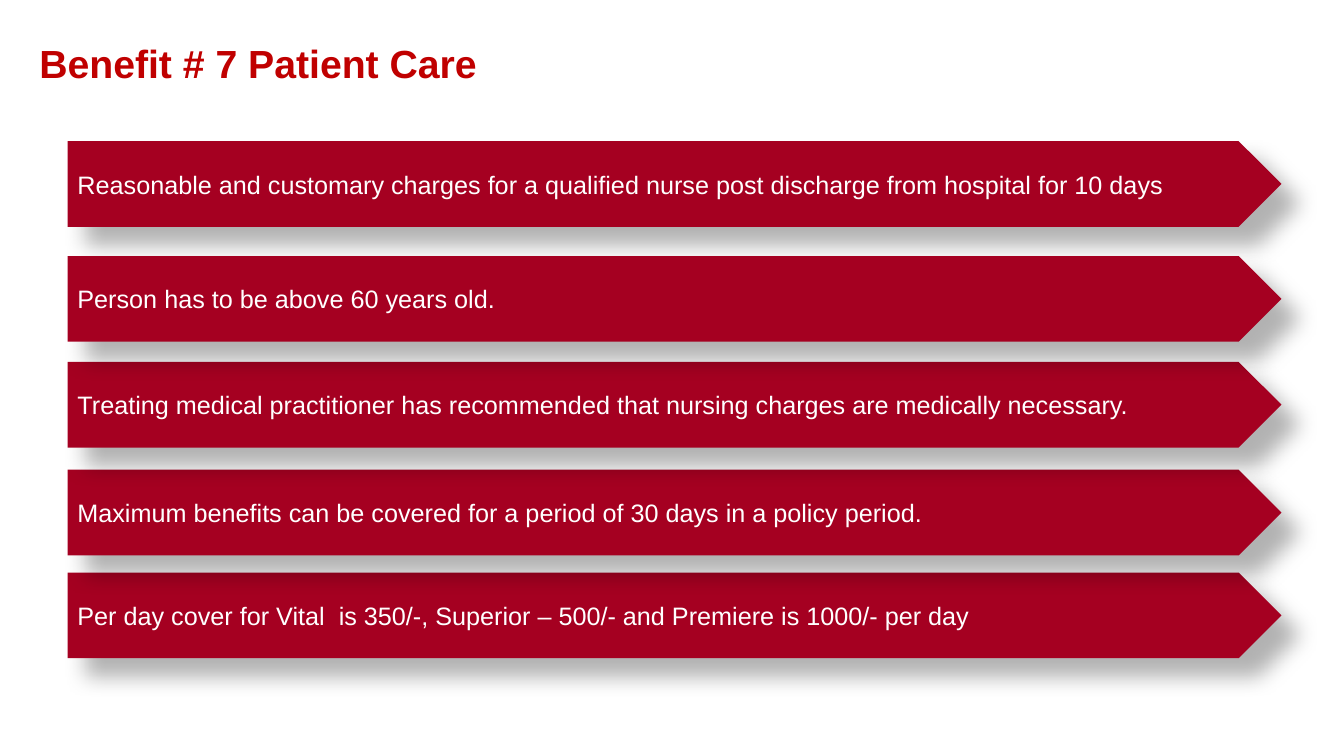
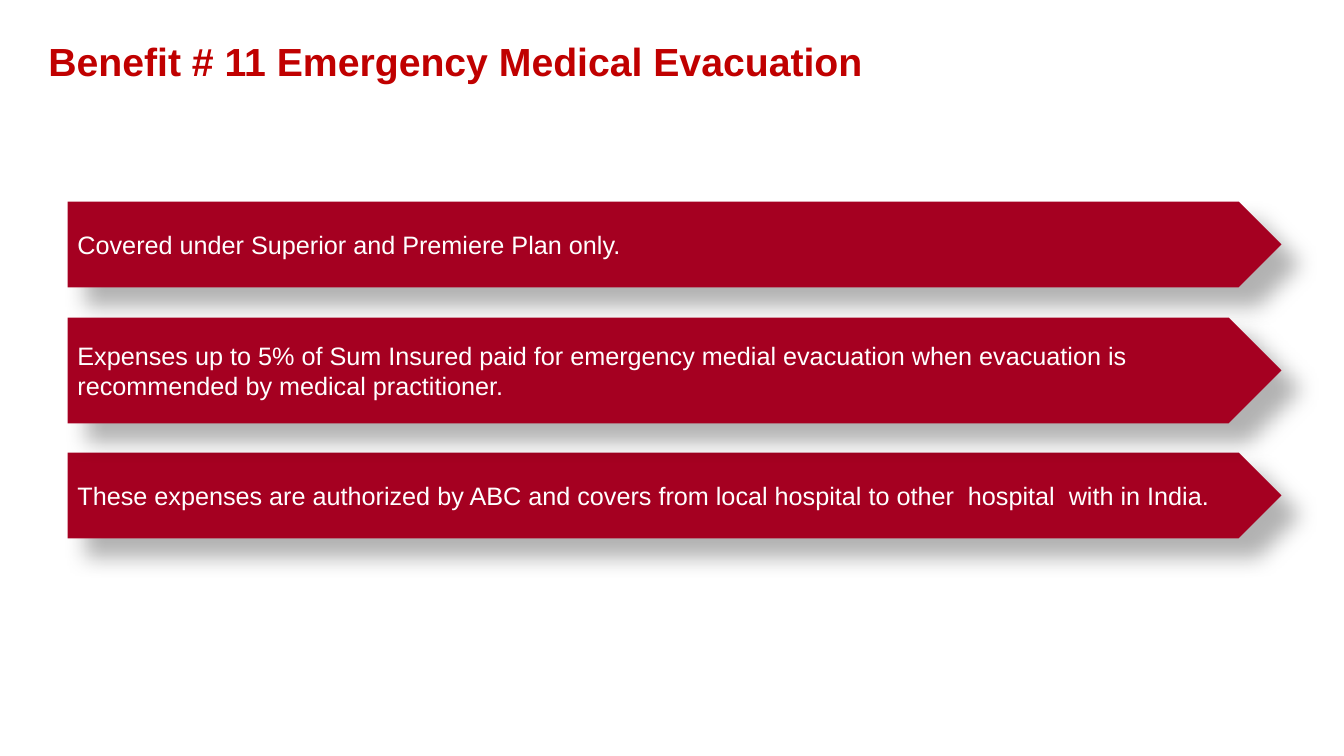
from lxml.etree import SubElement
from pptx import Presentation
from pptx.dml.color import RGBColor
from pptx.enum.shapes import MSO_SHAPE
from pptx.enum.text import MSO_ANCHOR, MSO_AUTO_SIZE, PP_ALIGN
from pptx.oxml.ns import qn
from pptx.util import Inches, Pt

RED = RGBColor(0xC0, 0x00, 0x00)
CRIMSON = RGBColor(0xA5, 0x00, 0x21)
WHITE = RGBColor(0xFF, 0xFF, 0xFF)
BLACK = RGBColor(0x00, 0x00, 0x00)
FONT = "Arial"
WIDE, HIGH = 13.33, 7.5
LEFT, SPAN = 0.67, 12.04
ROW = 0.85

SLIDES = [
    ("Benefit # 7 Patient Care", (0.29, 0), [
        (1.4, ROW, "Reasonable and customary charges for a qualified nurse post discharge from hospital for 10 days"),
        (2.54, ROW, "Person has to be above 60 years old."),
        (3.59, ROW, "Treating medical practitioner has recommended that nursing charges are medically necessary."),
        (4.66, ROW, "Maximum benefits can be covered for a period of 30 days in a policy period."),
        (5.68, ROW, "Per day cover for Vital  is 350/-, Superior – 500/- and Premiere is 1000/- per day"),
    ]),
    ("Benefit # 11 Emergency Medical Evacuation", (0.38, -0.02), [
        (2, ROW, "Covered under Superior and Premiere Plan only."),
        (3.15, 1.05, "Expenses up to 5% of Sum Insured paid for emergency medial evacuation "
                     "when evacuation is recommended by medical practitioner."),
        (4.49, ROW, "These expenses are authorized by ABC and covers from local hospital to other  hospital  with in India."),
    ]),
]


def write(shape, text, size, color, bold=False):
    """Fill a shape with one left-aligned, vertically centred paragraph."""
    frame = shape.text_frame
    frame.word_wrap = True
    frame.auto_size = MSO_AUTO_SIZE.NONE
    frame.vertical_anchor = MSO_ANCHOR.MIDDLE
    line = frame.paragraphs[0]
    line.text = text
    line.alignment = PP_ALIGN.LEFT
    font = line.font
    font.name, font.size, font.bold = FONT, Pt(size), bold
    font.color.rgb = color


def shade(shape):
    """Cast a soft shadow down and to the right."""
    shape.shadow.inherit = False
    effects = shape.element.spPr.find(qn("a:effectLst"))
    outer = SubElement(effects, qn("a:outerShdw"), blurRad=str(Pt(15)), dist=str(Pt(18)),
                       dir="2700000", algn="tl", rotWithShape="0")
    tint = SubElement(outer, qn("a:srgbClr"), val=str(BLACK))
    SubElement(tint, qn("a:alpha"), val="30000")


def add_title(slide, text, spot):
    """Place the slide title with its top left corner at the spot."""
    title = slide.shapes.title
    title.left, title.top = map(Inches, spot)
    title.width, title.height = Inches(12), Inches(1.25)
    write(title, text, 28, RED, True)


def add_arrow(slide, top, tall, text):
    """Draw one shadowed pentagon arrow across the slide."""
    box = map(Inches, (LEFT, top, SPAN, tall))
    arrow = slide.shapes.add_shape(MSO_SHAPE.PENTAGON, *box)
    arrow.fill.solid()
    arrow.fill.fore_color.rgb = CRIMSON
    arrow.line.fill.background()
    shade(arrow)
    write(arrow, text, 18, WHITE)


def add_slide(deck, title, spot, rows):
    """Build a slide, stacking the arrows below the first from the bottom up."""
    slide = deck.slides.add_slide(deck.slide_layouts[5])
    add_title(slide, title, spot)
    for row in rows[:1] + rows[:0:-1]:
        add_arrow(slide, *row)


def main():
    """Build and save the deck."""
    deck = Presentation()
    deck.slide_width, deck.slide_height = Inches(WIDE), Inches(HIGH)
    for page in SLIDES:
        add_slide(deck, *page)
    deck.save("out.pptx")


if __name__ == "__main__":
    main()
